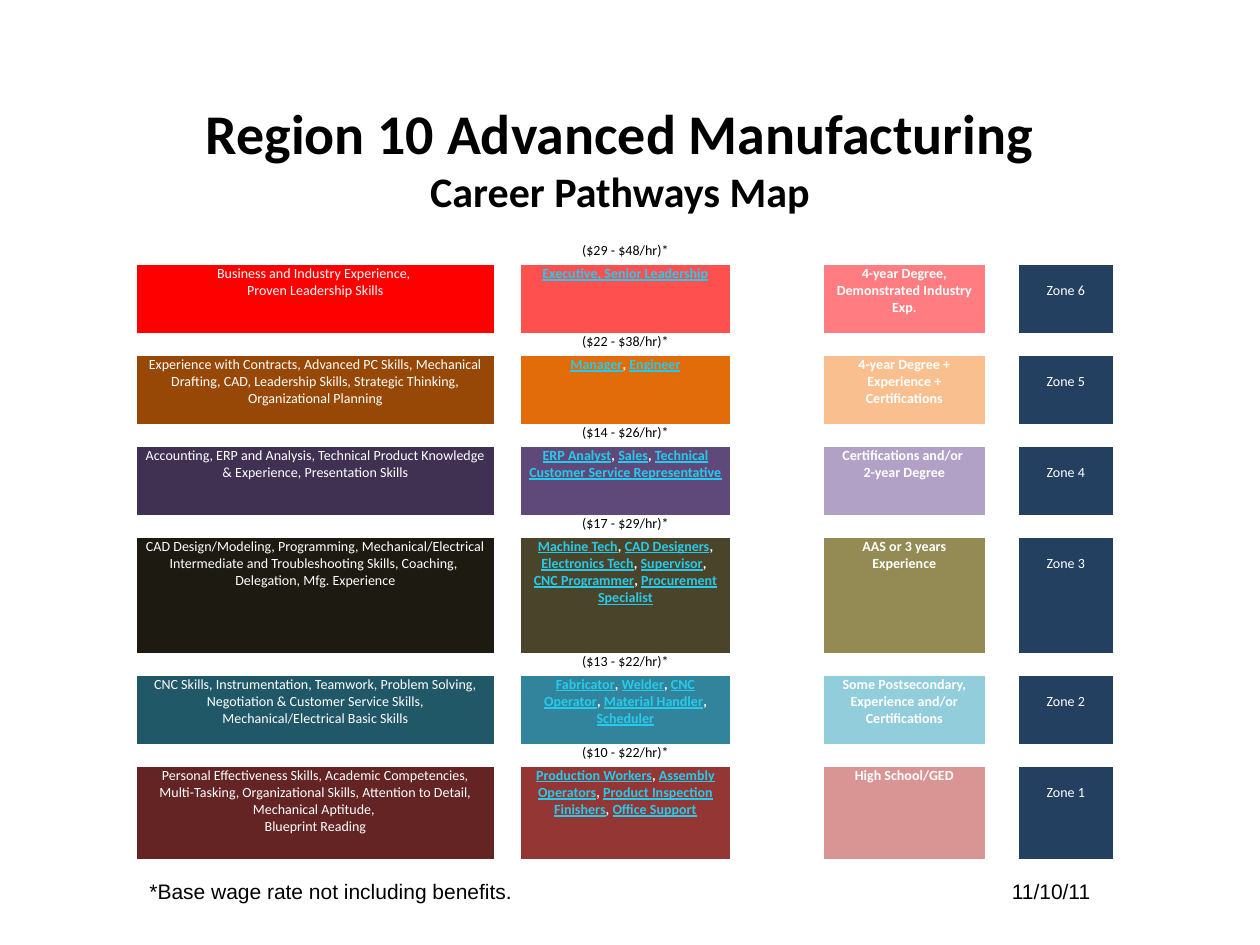
from dataclasses import dataclass
from lxml.etree import SubElement
from pptx import Presentation
from pptx.dml.color import RGBColor
from pptx.enum.text import MSO_ANCHOR, MSO_AUTO_SIZE, PP_ALIGN
from pptx.oxml.ns import qn
from pptx.util import Pt

EMU_PER_PX = 914400 / 126
NO_STYLE = "{2D5ABB26-0587-4C30-8999-92F81FD0307C}"


@dataclass(frozen=True)
class Theme:
    font: str = "Calibri"
    note_font: str = "Arial"
    ink: str = "000000"
    light: str = "FFFFFF"
    link: str = "26CBEC"
    zone: str = "244061"
    title: int = 32
    subtitle: int = 24
    note: int = 12
    cell: int = 8


COLUMNS = [357, 27, 209, 94, 161, 34, 94]
SKILLS, JOBS, DEGREE, ZONE = 0, 2, 4, 6
WAGE_HEIGHT = 23
ZONES = [
    (68, "$29 - $48", ("FF0000", "FF5050", "FF7C80"),
     "Business and Industry Experience, \nProven Leadership Skills",
     "Executive, Senior Leadership",
     "4-year Degree, Demonstrated Industry Exp."),
    (68, "$22 - $38", ("984806", "E36C0A", "FABF8F"),
     "Experience with Contracts, Advanced PC Skills, Mechanical Drafting, CAD, "
     "Leadership Skills, Strategic Thinking, Organizational Planning",
     "Manager|Engineer",
     "4-year Degree + Experience + Certifications"),
    (68, "$14 - $26", ("403152", "5F497A", "B2A1C7"),
     "Accounting, ERP and Analysis, Technical Product Knowledge & Experience, "
     "Presentation Skills",
     "ERP Analyst|Sales|Technical Customer Service Representative",
     "Certifications and/or \n2-year Degree"),
    (115, "$17 - $29", ("1D1B11", "4A442A", "948A54"),
     "CAD Design/Modeling, Programming, Mechanical/Electrical Intermediate and "
     "Troubleshooting Skills, Coaching, \nDelegation, Mfg. Experience",
     "Machine Tech|CAD Designers|Electronics Tech|Supervisor|\n"
     "CNC Programmer|Procurement Specialist",
     "AAS or 3 years Experience"),
    (68, "$13 - $22", ("215868", "31849B", "92CDDC"),
     "CNC Skills, Instrumentation, Teamwork, Problem Solving, Negotiation & "
     "Customer Service Skills, Mechanical/Electrical Basic Skills",
     "Fabricator|Welder|CNC Operator|Material Handler|Scheduler",
     "Some Postsecondary, Experience and/or Certifications"),
    (92, "$10 - $22", ("632423", "943634", "D99594"),
     "Personal Effectiveness Skills, Academic Competencies, Multi-Tasking, "
     "Organizational Skills, Attention to Detail, Mechanical Aptitude, \n"
     "Blueprint Reading",
     "Production Workers|Assembly Operators|Product Inspection Finishers|Office Support",
     "High School/GED"),
]


def px(length):
    return round(length * EMU_PER_PX)


def write(para, text, *, font, size, color, bold=False, underline=False):
    span = para.add_run()
    span.text = text
    span.font.name = font
    span.font.size = Pt(size)
    span.font.color.rgb = RGBColor.from_string(color)
    span.font.bold = bold
    span.font.underline = underline


class Page:
    def __init__(self, deck, theme):
        self.theme = theme
        self.slide = deck.slides.add_slide(deck.slide_layouts[5])

    def title(self, box, heading, subheading):
        theme, shape = self.theme, self.slide.shapes.title
        shape.left, shape.top, shape.width, shape.height = map(px, box)
        frame = shape.text_frame
        frame.auto_size = MSO_AUTO_SIZE.NONE
        frame.vertical_anchor = MSO_ANCHOR.MIDDLE
        para = frame.paragraphs[0]
        para.alignment = PP_ALIGN.CENTER
        style = dict(font=theme.font, color=theme.ink, bold=True)
        write(para, heading, size=theme.title, **style)
        para.add_line_break()
        write(para, subheading, size=theme.subtitle, **style)

    def table(self, left, top, columns, rows):
        frame = self.slide.shapes.add_table(
            len(rows), len(columns), px(left), px(top), px(sum(columns)), px(sum(rows)))
        table = frame.table
        table.first_row = table.horz_banding = False
        table._tbl.tblPr.find(qn("a:tableStyleId")).text = NO_STYLE
        for column, width in zip(table.columns, columns):
            column.width = px(width)
        for row, height in zip(table.rows, rows):
            row.height = px(height)
        for cell in table.iter_cells():
            cell.fill.background()
            cell.margin_left = cell.margin_right = px(8)
            cell.margin_top = cell.margin_bottom = 0
            end = cell.text_frame.paragraphs[0]._p.get_or_add_endParaRPr()
            end.set("sz", str(self.theme.cell * 100))
        return table

    def cell(self, cell, text, *, fill=None, color=None, bold=False, links=False, drop=0):
        theme = self.theme
        if fill:
            cell.fill.solid()
            cell.fill.fore_color.rgb = RGBColor.from_string(fill)
        cell.margin_top = px(drop)
        style = dict(font=theme.font, size=theme.cell, color=color or theme.light, bold=bold)
        for index, line in enumerate(text.split("\n")):
            frame = cell.text_frame
            para = frame.add_paragraph() if index else frame.paragraphs[0]
            para.alignment = PP_ALIGN.CENTER
            if not links:
                write(para, line, **style)
                continue
            for position, job in enumerate(line.split("|")):
                if position:
                    write(para, ", ", **style)
                if job:
                    write(para, job, **{**style, "color": theme.link}, underline=True)

    def footer(self, box, note, date, tab):
        frame = self.slide.shapes.add_textbox(*map(px, box)).text_frame
        frame.word_wrap = True
        para = frame.paragraphs[0]
        stops = SubElement(para._p.get_or_add_pPr(), qn("a:tabLst"))
        SubElement(stops, qn("a:tab"), pos=str(px(tab)), algn="r")
        write(para, f"{note}\t{date}", font=self.theme.note_font,
              size=self.theme.note, color=self.theme.ink)


def main():
    deck = Presentation()
    deck.slide_width, deck.slide_height = px(1260), px(945)
    theme = Theme()
    page = Page(deck, theme)
    page.title((53, 84, 1134, 147), "Region 10 Advanced Manufacturing", "Career Pathways Map")

    heights = [height for zone in ZONES for height in (WAGE_HEIGHT, zone[0])]
    table = page.table(137, 242, COLUMNS, heights)
    for index, (_, wage, fills, skills, jobs, degree) in enumerate(ZONES):
        row = 2 * index + 1
        page.cell(table.cell(row - 1, JOBS), f"({wage}/hr)*", color=theme.ink)
        page.cell(table.cell(row, SKILLS), skills, fill=fills[0])
        page.cell(table.cell(row, JOBS), jobs, fill=fills[1], bold=True, links=True)
        page.cell(table.cell(row, DEGREE), degree, fill=fills[2], bold=True)
        page.cell(table.cell(row, ZONE), f"Zone {len(ZONES) - index}", fill=theme.zone, drop=17)

    page.footer((137, 872, 976, 38), "*Base wage rate not including benefits.", "11/10/11", 941)
    deck.save("out.pptx")


if __name__ == "__main__":
    main()
